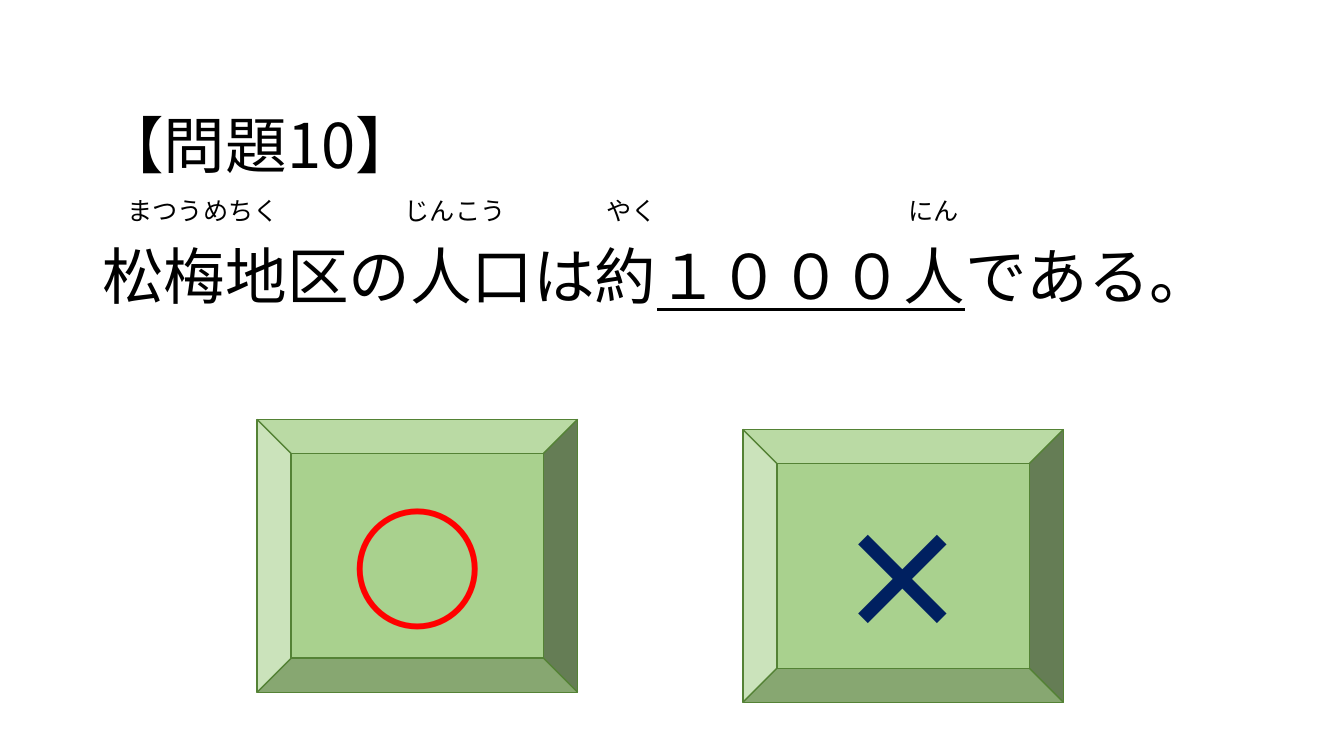
from lxml import etree
from pptx import Presentation, util as u
from pptx.dml.color import RGBColor
from pptx.enum import shapes, text
from pptx.oxml import ns

BLACK = RGBColor(0x00, 0x00, 0x00)
RED = RGBColor(0xFF, 0x00, 0x00)
NAVY = RGBColor(0x00, 0x20, 0x60)
GREEN = RGBColor(0xA9, 0xD1, 0x8E)
DARK_GREEN = RGBColor(0x54, 0x82, 0x35)

READING_SIZE = 18
READINGS = [("まつうめちく", 1), ("じんこう", 12), ("やく", 20), ("にん", 32)]
ANSWERS = [("○", RED, 183.6, 299.5), ("×", NAVY, 530.6, 306.7)]


class QuizSlide:
    font_name = "Noto Sans CJK JP"

    def __init__(self, slide):
        self.slide = slide

    def style(self, paragraph, size, color, line_height, bold=False):
        paragraph.line_spacing = u.Pt(line_height)
        for run in paragraph.runs:
            run.font.name = self.font_name
            run.font.size = u.Pt(size)
            run.font.color.rgb = color
            run.font.bold = bold
            east_asian = etree.SubElement(run.font._element, ns.qn("a:ea"))
            east_asian.set("typeface", self.font_name)

    def text_box(self, left, top, width, height):
        shape = self.slide.shapes.add_textbox(*map(u.Pt, (left, top, width, height)))
        shape.text_frame.word_wrap = True
        return shape.text_frame

    def question(self, heading, parts):
        text_frame = self.text_box(66, 28.8, 828, 241.2)
        text_frame.vertical_anchor = text.MSO_ANCHOR.MIDDLE
        text_frame.margin_top = u.Pt(9.6)
        text_frame.text = heading
        sentence = text_frame.add_paragraph()
        sentence.space_before = u.Pt(47)
        for words, underlined in parts:
            run = sentence.add_run()
            run.text = words
            run.font.underline = underlined
        for paragraph in text_frame.paragraphs:
            self.style(paragraph, 44, BLACK, 47)

    def readings(self, readings):
        text_frame = self.text_box(66, 134.6, 795.6, 28.8)
        paragraph = text_frame.paragraphs[0]
        paragraph.text = "".join("\t" + reading for reading, _ in readings)
        self.style(paragraph, READING_SIZE, BLACK, 23)
        properties = paragraph._p.get_or_add_pPr()
        tab_list = etree.SubElement(properties, ns.qn("a:tabLst"))
        for _, column in readings:
            tab = etree.SubElement(tab_list, ns.qn("a:tab"))
            tab.set("pos", str(u.Pt(column * READING_SIZE)))
            tab.set("algn", "l")

    def answer(self, symbol, color, left, top):
        shape = self.slide.shapes.add_shape(
            shapes.MSO_SHAPE.BEVEL, *map(u.Pt, (left, top, 229, 195))
        )
        shape.shadow.inherit = False
        shape.fill.solid()
        shape.fill.fore_color.rgb = GREEN
        shape.line.color.rgb = DARK_GREEN
        shape.line.width = u.Pt(1)
        text_frame = shape.text_frame
        text_frame.text = symbol
        text_frame.vertical_anchor = text.MSO_ANCHOR.MIDDLE
        paragraph = text_frame.paragraphs[0]
        paragraph.alignment = text.PP_ALIGN.CENTER
        self.style(paragraph, 96, color, 131, bold=True)


def main():
    presentation = Presentation()
    presentation.slide_width = u.Pt(960)
    presentation.slide_height = u.Pt(540)
    quiz = QuizSlide(presentation.slides.add_slide(presentation.slide_layouts[6]))
    quiz.question(
        "【問題10】",
        [("松梅地区の人口は約", False), ("１０００人", True), ("である。", False)],
    )
    for answer in ANSWERS:
        quiz.answer(*answer)
    quiz.readings(READINGS)
    presentation.save("out.pptx")


if __name__ == "__main__":
    main()
